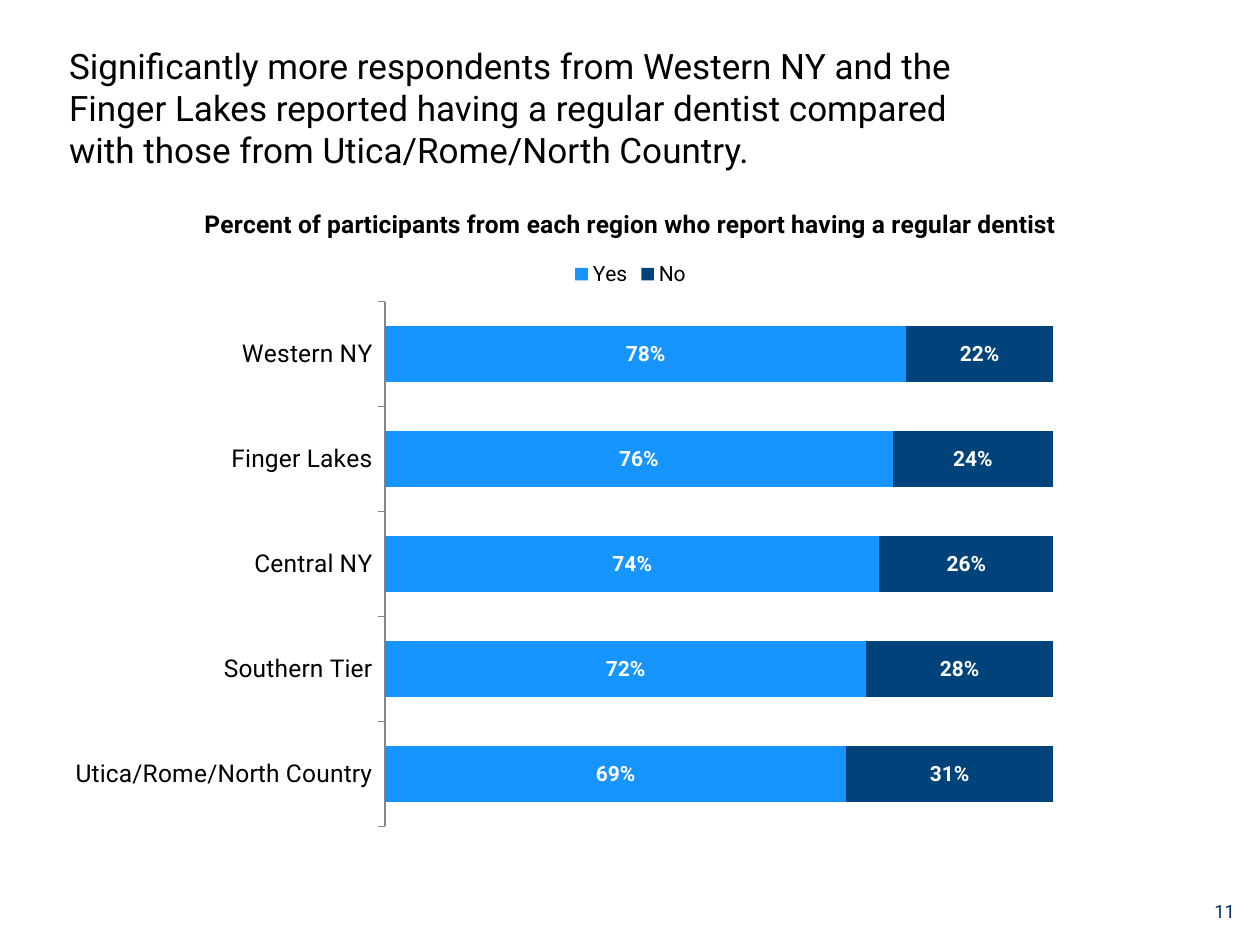
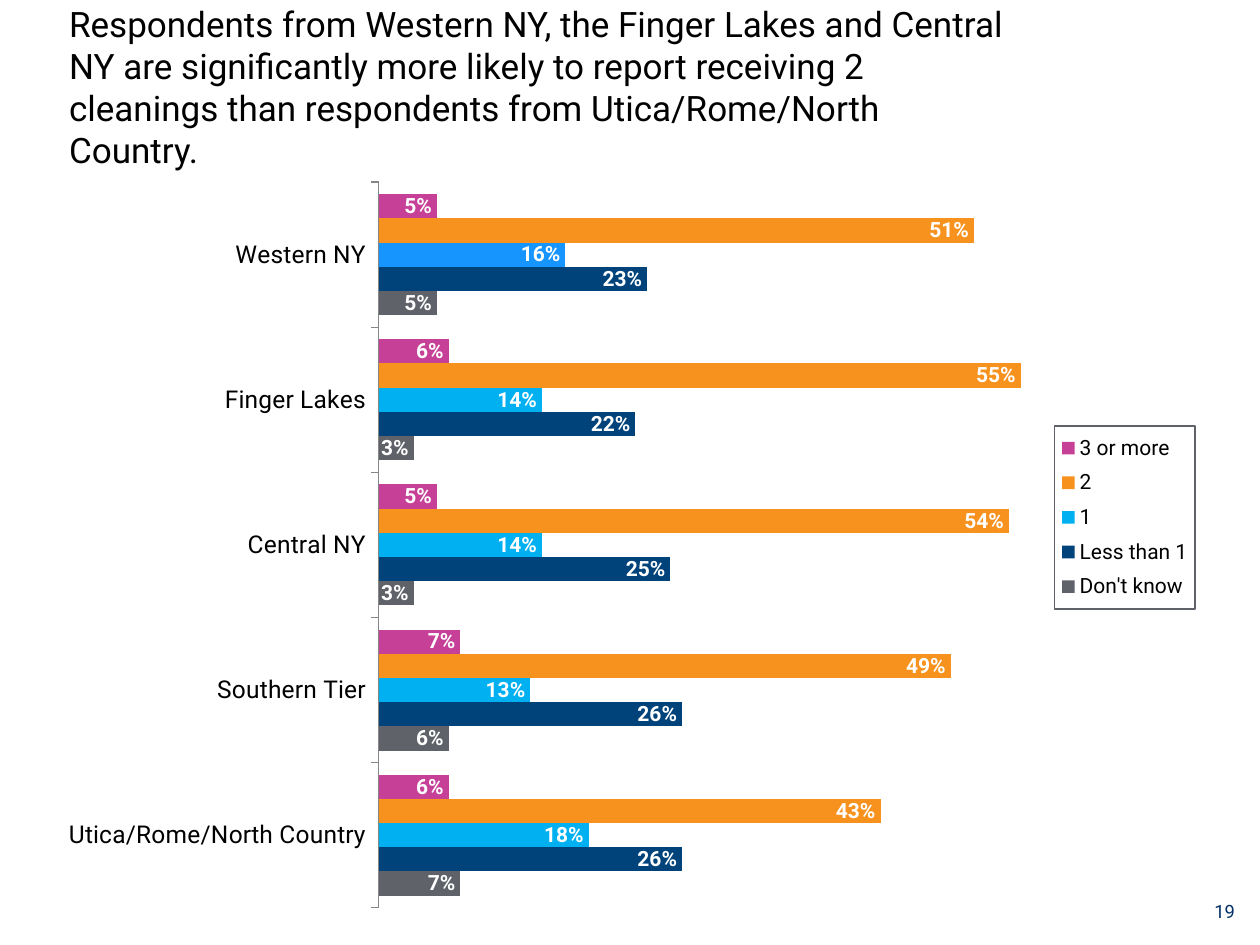
from lxml import etree
from pptx import Presentation
from pptx.chart.data import CategoryChartData
from pptx.dml.color import RGBColor
from pptx.enum.chart import XL_CHART_TYPE, XL_LABEL_POSITION, XL_LEGEND_POSITION, XL_TICK_MARK
from pptx.enum.text import MSO_ANCHOR, PP_ALIGN
from pptx.oxml.ns import qn
from pptx.util import Inches, Pt

STACKED, CLUSTERED = XL_CHART_TYPE.BAR_STACKED, XL_CHART_TYPE.BAR_CLUSTERED
LABEL_CENTER, LABEL_INSIDE_END = XL_LABEL_POSITION.CENTER, XL_LABEL_POSITION.INSIDE_END
LEGEND_TOP, LEGEND_RIGHT = XL_LEGEND_POSITION.TOP, XL_LEGEND_POSITION.RIGHT
TICK_OUTSIDE, TICK_NONE = XL_TICK_MARK.OUTSIDE, XL_TICK_MARK.NONE
MIDDLE = MSO_ANCHOR.MIDDLE
LEFT, RIGHT = PP_ALIGN.LEFT, PP_ALIGN.RIGHT

BLACK = RGBColor(0x00, 0x00, 0x00)
WHITE = RGBColor(0xFF, 0xFF, 0xFF)
PAGE_NAVY = RGBColor(0x04, 0x31, 0x67)
NAVY = RGBColor(0x00, 0x43, 0x7B)
BLUE = RGBColor(0x17, 0x95, 0xFF)
SKY = RGBColor(0x00, 0xB0, 0xF0)
ORANGE = RGBColor(0xF7, 0x92, 0x1E)
MAGENTA = RGBColor(0xC6, 0x40, 0x97)
GRAY = RGBColor(0x5F, 0x63, 0x69)
AXIS_GRAY = RGBColor(0x86, 0x86, 0x86)

REGIONS = ["Utica/Rome/North Country", "Southern Tier", "Central NY", "Finger Lakes", "Western NY"]
HAS_DENTIST = [
    ("Yes", BLUE, [0.69, 0.72, 0.74, 0.76, 0.78]),
    ("No", NAVY, [0.31, 0.28, 0.26, 0.24, 0.22]),
]
CLEANINGS = [
    ("Don't know", GRAY, [0.07, 0.06, 0.03, 0.03, 0.05]),
    ("Less than 1", NAVY, [0.26, 0.26, 0.25, 0.22, 0.23]),
    ("1", SKY, [0.18, 0.13, 0.14, 0.14, 0.16]),
    ("2", ORANGE, [0.43, 0.49, 0.54, 0.55, 0.51]),
    ("3 or more", MAGENTA, [0.06, 0.07, 0.05, 0.06, 0.05]),
]


def manual_layout(x, y, w, h, inner=False):
    """Return a c:layout element; lengths are fractions of the chart."""
    layout = etree.Element(qn("c:layout"))
    manual = etree.SubElement(layout, qn("c:manualLayout"))
    settings = [("layoutTarget", "inner")] if inner else []
    settings += [("xMode", "edge"), ("yMode", "edge"), ("x", x), ("y", y), ("w", w), ("h", h)]
    for tag, value in settings:
        etree.SubElement(manual, qn(f"c:{tag}")).set("val", str(value))
    return layout


def set_font(font, size, color=BLACK, bold=False):
    font.name, font.size, font.bold = "Roboto", Pt(size), bold
    font.color.rgb = color


def paint(fill, color):
    fill.solid()
    fill.fore_color.rgb = color


class Deck:
    def __init__(self):
        self.prs = Presentation()
        self.prs.slide_width, self.prs.slide_height = Inches(10), Inches(7.5)
        self.slide = None

    def new_slide(self, page):
        self.slide = self.prs.slides.add_slide(self.prs.slide_layouts[6])
        self.text(page, 9.3, 7.11, 0.6, 0.24, 10.5, PAGE_NAVY, RIGHT)

    def text(self, words, x, y, w, h, size, color=BLACK, align=LEFT):
        frame = self.slide.shapes.add_textbox(Inches(x), Inches(y), Inches(w), Inches(h)).text_frame
        frame.word_wrap = True
        frame.vertical_anchor = MIDDLE
        paragraph = frame.paragraphs[0]
        paragraph.alignment = align
        run = paragraph.add_run()
        run.text = words
        set_font(run.font, size, color)

    def title(self, words, y, width):
        self.text(words, 0.45, y, width, 0.77, 20)

    def bar_chart(self, kind, answers, x, y, h, gap, top_value, plot_area, legend_at, label_at):
        data = CategoryChartData(number_format="0%")
        data.categories = REGIONS
        for name, _, shares in answers:
            data.add_series(name, shares)
        chart = self.slide.shapes.add_chart(
            kind, Inches(x), Inches(y), Inches(9.19), Inches(h), data).chart
        set_font(chart.font, 12)
        chart.has_title = False

        bars = chart.plots[0]
        bars.vary_by_categories = False
        bars.gap_width = gap
        bars.overlap = 100 if kind == STACKED else 0
        for series, (_, color, _) in zip(bars.series, answers):
            series.invert_if_negative = False
            paint(series.format.fill, color)
            labels = series.data_labels
            labels.show_value = True
            labels.number_format, labels.number_format_is_linked = "0%", False
            labels.position = label_at
            set_font(labels.font, 12, WHITE, True)

        regions = chart.category_axis
        regions.major_tick_mark, regions.minor_tick_mark = TICK_OUTSIDE, TICK_NONE
        regions.has_major_gridlines = False
        regions.format.line.color.rgb = AXIS_GRAY
        set_font(regions.tick_labels.font, 14)
        shares = chart.value_axis
        shares.visible = shares.has_major_gridlines = False
        shares.minimum_scale, shares.maximum_scale = 0, top_value

        chart.has_legend = True
        chart.legend.position = legend_at
        chart.legend.include_in_layout = False
        set_font(chart.legend.font, 12)

        area = chart._chartSpace.find(".//" + qn("c:plotArea"))
        for automatic in area.findall(qn("c:layout")):
            area.remove(automatic)
        area.insert(0, manual_layout(*plot_area, inner=True))
        return chart

    def chart_title(self, chart, words):
        run = chart.chart_title.text_frame.paragraphs[0].add_run()
        run.text = words
        set_font(run.font, 14, bold=True)
        chart.chart_title.include_in_layout = False

    def framed_legend(self, chart, *place):
        """Fix the legend's place and draw a thin frame around it."""
        legend = chart._chartSpace.find(".//" + qn("c:legend"))
        for automatic in legend.findall(qn("c:layout")):
            legend.remove(automatic)
        legend.find(qn("c:legendPos")).addnext(manual_layout(*place))
        frame = etree.Element(qn("c:spPr"))
        line = etree.SubElement(frame, qn("a:ln"), w=str(Pt(0.75)))
        fill = etree.SubElement(line, qn("a:solidFill"))
        etree.SubElement(fill, qn("a:srgbClr"), val=str(GRAY))
        legend.find(qn("c:overlay")).addnext(frame)


def main():
    deck = Deck()

    deck.new_slide("11")
    deck.title("Significantly more respondents from Western NY and the Finger Lakes reported having "
               "a regular dentist compared with those from Utica/Rome/North Country.", 0.47, 7.62)
    dentist = deck.bar_chart(STACKED, HAS_DENTIST, 0.41, 1.45, 5.22, 88, 1,
                             (0.288, 0.181, 0.577, 0.798), LEGEND_TOP, LABEL_CENTER)
    deck.chart_title(dentist, "Percent of participants from each region who report having a regular dentist")

    deck.new_slide("19")
    deck.title("Respondents from Western NY, the Finger Lakes and Central NY are significantly more "
               "likely to report receiving 2 cleanings than respondents from Utica/Rome/North Country.",
               0.3, 7.7)
    cleanings = deck.bar_chart(CLUSTERED, CLEANINGS, 0.45, 1.44, 5.77, 100, 0.6,
                               (0.278, 0, 0.605, 1), LEGEND_RIGHT, LABEL_INSIDE_END)
    deck.framed_legend(cleanings, 0.862, 0.336, 0.121, 0.252)
    once_a_year = cleanings.plots[0].series[2]
    paint(once_a_year.points[REGIONS.index("Western NY")].format.fill, BLUE)

    deck.prs.save("out.pptx")


if __name__ == "__main__":
    main()
